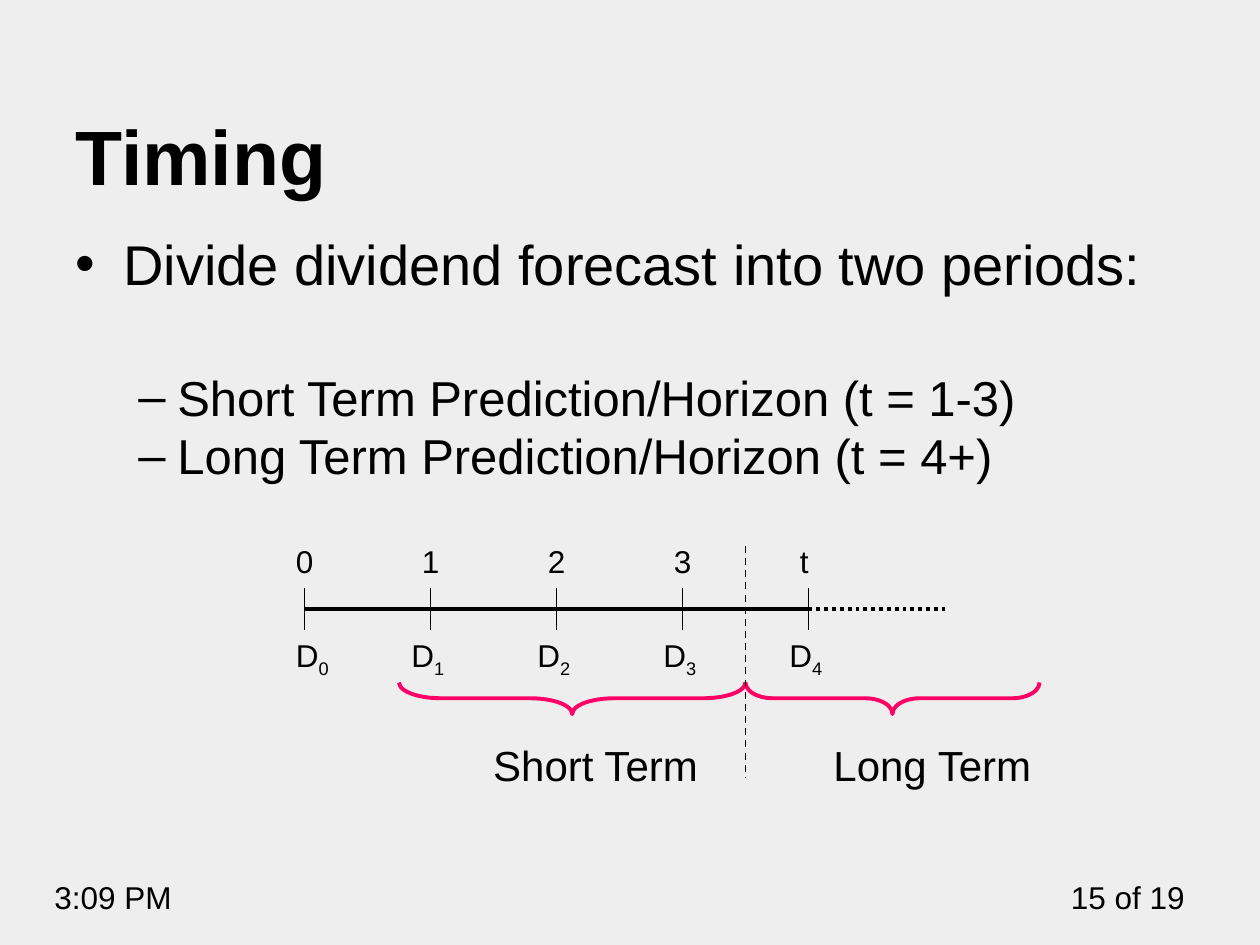
from dataclasses import dataclass

from lxml import etree
from pptx import Presentation
from pptx.dml.color import RGBColor
from pptx.enum.dml import MSO_LINE
from pptx.enum.shapes import MSO_CONNECTOR, MSO_SHAPE
from pptx.enum.text import MSO_ANCHOR, PP_ALIGN
from pptx.oxml.ns import qn
from pptx.util import Inches, Pt

STRAIGHT = MSO_CONNECTOR.STRAIGHT
BRACE = MSO_SHAPE.LEFT_BRACE
DASH, DOTS = MSO_LINE.DASH, MSO_LINE.ROUND_DOT
LEFT, RIGHT = PP_ALIGN.LEFT, PP_ALIGN.RIGHT
TOP, BOTTOM = MSO_ANCHOR.TOP, MSO_ANCHOR.BOTTOM
COLS = 120
UNIT = Inches(10) // COLS


@dataclass(frozen=True)
class Theme:
    """Colours, font, type sizes and line widths of the slide."""
    paper: str = "EEEEEE"
    ink: str = "000000"
    accent: str = "FF0066"
    font: str = "Arial"
    title: int = 44
    body: int = 32
    sub: int = 28
    term: int = 24
    small: int = 18
    thick: float = 2.25
    thin: float = 1


THEME = Theme()


def grid(*cells):
    """Turn grid columns and rows into lengths."""
    return [round(c * UNIT) for c in cells]


def set_bullet(p, char, margin, hang):
    """Give a paragraph a hanging bullet, with indents in inches."""
    pPr = p._p.get_or_add_pPr()
    pPr.set("marL", str(Inches(margin)))
    pPr.set("indent", str(-Inches(hang)))
    etree.SubElement(pPr, qn("a:buFont")).set("typeface", THEME.font)
    etree.SubElement(pPr, qn("a:buChar")).set("char", char)


def write(p, text, size=THEME.small, bold=False, align=LEFT, sub="", before=0):
    """Write formatted text and an optional subscript into a paragraph."""
    p.alignment = align
    p.space_before = Pt(before)
    for part, baseline in ((text, None), (sub, "-25000")):
        if not part:
            continue
        r = p.add_run()
        r.text = part
        r.font.name, r.font.size, r.font.bold = THEME.font, Pt(size), bold
        r.font.color.rgb = RGBColor.from_string(THEME.ink)
        if baseline:
            r._r.get_or_add_rPr().set("baseline", baseline)


def add_frame(s, box, anchor=TOP):
    """Add a wrapping text box and return its text frame."""
    tf = s.shapes.add_textbox(*grid(*box)).text_frame
    tf.word_wrap = True
    tf.vertical_anchor = anchor
    return tf


def add_label(s, box, text, anchor=TOP, **fmt):
    """Add a text box with one paragraph."""
    write(add_frame(s, box, anchor).paragraphs[0], text, **fmt)


def add_bullets(s, box, items):
    """Add a bulleted list of (text, level, size, space before)."""
    tf = add_frame(s, box)
    for i, (text, level, size, before) in enumerate(items):
        p = tf.add_paragraph() if i else tf.paragraphs[0]
        p.level = level
        set_bullet(p, *(("–", 0.81, 0.31) if level else ("•", 0.38, 0.38)))
        write(p, text, size=size, before=before)


def add_line(s, ends, width=THEME.thin, dash=None):
    """Add a straight line between two grid points."""
    sp = s.shapes.add_connector(STRAIGHT, *grid(*ends))
    sp.line.color.rgb = RGBColor.from_string(THEME.ink)
    sp.line.width = Pt(width)
    if dash:
        sp.line.dash_style = dash
    etree.SubElement(sp._element.spPr, qn("a:effectLst"))


def add_brace(s, start, end, middle, curl):
    """Add a downward brace from one column to another."""
    span, depth = end - start, 3
    box = ((start + end - depth) / 2, middle - span / 2, depth, span)
    sp = s.shapes.add_shape(BRACE, *grid(*box))
    sp.rotation = 270
    sp.adjustments[0], sp.adjustments[1] = curl, 0.5
    sp.shadow.inherit = False
    sp.fill.background()
    sp.line.color.rgb = RGBColor.from_string(THEME.accent)
    sp.line.width = Pt(THEME.thick)


def add_timeline(s):
    """Draw the dividend timeline with its two horizons."""
    first, step, axis, split = 29, 12, 58, 71
    times = ["0", "1", "2", "3", "t"]
    last = first + step * (len(times) - 1)
    add_line(s, (first, axis, last, axis), THEME.thick)
    add_line(s, (last, axis, 90, axis), THEME.thick, DOTS)
    for i, time in enumerate(times):
        x = first + step * i
        add_line(s, (x, axis - 2, x, axis + 2))
        add_label(s, (x - 2, 51, 4, 4.8), time)
        add_label(s, (x - (3 if i else 2), 60, 7, 4.8), "D", sub=str(i))
    add_brace(s, 38, split, 66.5, 1.325)
    add_brace(s, split, 99, 66.5, 0.863)
    add_line(s, (split, 52, split, 74), dash=DASH)
    for x, name in ((45.8, "Short Term"), (78.2, "Long Term")):
        add_label(s, (x, 69.8, 23, 5.6), name, size=THEME.term)


def main():
    """Build and save the slide."""
    prs = Presentation()
    prs.slide_width, prs.slide_height = grid(COLS, COLS * 3 / 4)
    s = prs.slides.add_slide(prs.slide_layouts[6])
    s.background.fill.solid()
    s.background.fill.fore_color.rgb = RGBColor.from_string(THEME.paper)
    add_label(s, (100, 83, 14, 4.8), "15 of 19", align=RIGHT)
    add_label(s, (4, 83, 19, 4.8), "3:09 PM")
    add_label(s, (6, 4.7, 108, 15), "Timing", BOTTOM,
              size=THEME.title, bold=True)
    add_bullets(s, (6, 21.3, 108, 27), [
        ("Divide dividend forecast into two periods:", 0, THEME.body, 0),
        ("Short Term Prediction/Horizon (t = 1-3)", 1, THEME.sub, 40),
        ("Long Term Prediction/Horizon (t = 4+)", 1, THEME.sub, 0),
    ])
    add_timeline(s)
    prs.save("out.pptx")


if __name__ == "__main__":
    main()
